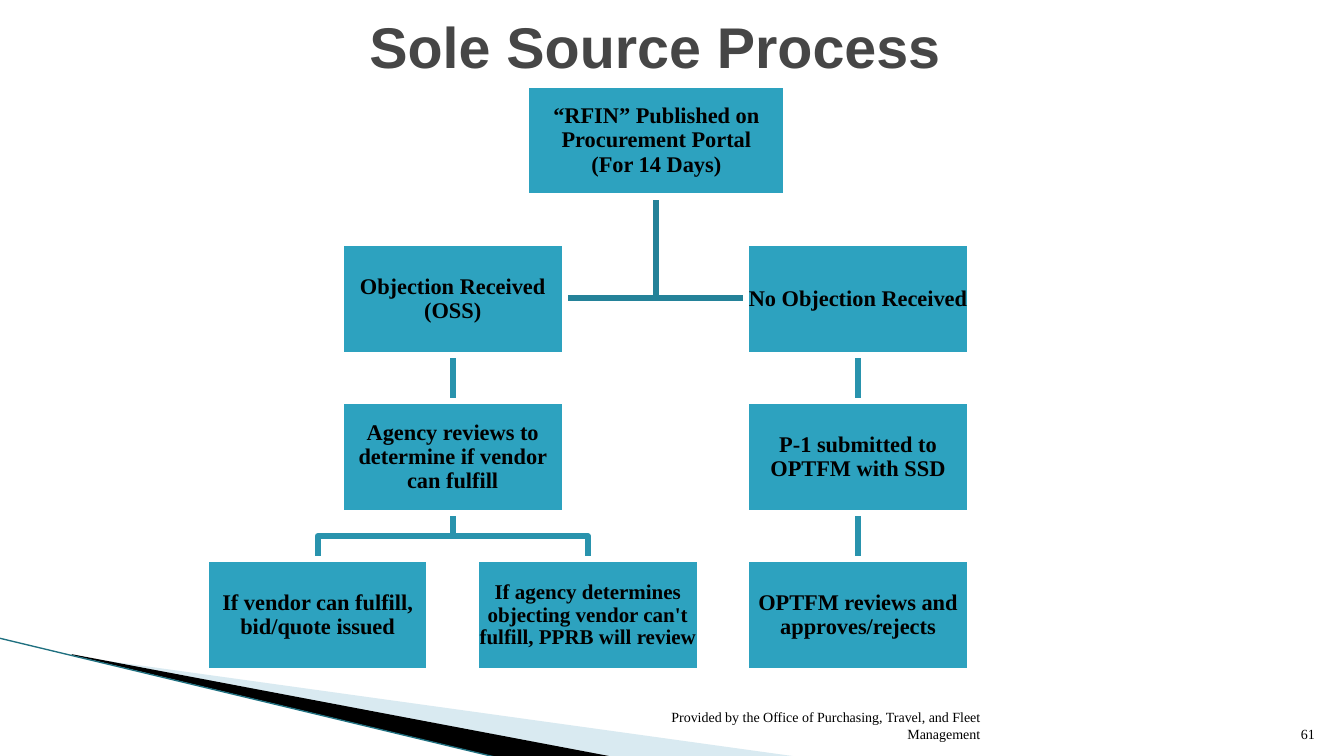
from dataclasses import dataclass

from lxml.etree import SubElement
from pptx import Presentation
from pptx.dml.color import RGBColor
from pptx.enum.shapes import MSO_CONNECTOR, MSO_SHAPE
from pptx.enum.text import MSO_ANCHOR, PP_ALIGN
from pptx.oxml.ns import qn
from pptx.util import Emu, Pt

EMU_PER_PX = 9144


@dataclass(frozen=True)
class Theme:
    """Colours, fonts and sizes of the slide."""
    heading_font: str = "Arial"
    body_font: str = "Times New Roman"
    title_color: str = "464646"
    black: str = "000000"
    white: str = "FFFFFF"
    box: str = "2DA2BF"
    root_link: str = "248299"
    link: str = "2993AD"
    pale_wedge: str = "A0CBDC"
    wedge_edge: str = "1F7080"
    title_size: int = 41
    box_size: int = 16
    tight_size: int = 15
    footer_size: int = 10
    link_width: float = 4.33
    edge_width: float = 0.95


class FlowSlide:
    """Draws the elements of a flow chart slide."""

    def __init__(self, slide, theme):
        self.slide = slide
        self.theme = theme

    def fill_text(self, text_frame, text, size, font=None, color=None, bold=False,
                  align=PP_ALIGN.CENTER, anchor=MSO_ANCHOR.MIDDLE):
        """Fill a text frame with one styled paragraph."""
        text_frame.word_wrap = True
        text_frame.vertical_anchor = anchor
        paragraph = text_frame.paragraphs[0]
        paragraph.text = text
        paragraph.alignment = align
        for run in paragraph.runs:
            run.font.name = font or self.theme.body_font
            run.font.size = Pt(size)
            run.font.bold = bold
            run.font.color.rgb = RGBColor.from_string(color or self.theme.black)

    def text(self, left, top, width, height, text, size, **style):
        """Add a text box."""
        box = self.slide.shapes.add_textbox(*(Emu(px * EMU_PER_PX) for px in (left, top, width, height)))
        self.fill_text(box.text_frame, text, size, **style)

    def outline(self, shape, color, width):
        """Give a shape or connector a solid line."""
        shape.line.color.rgb = RGBColor.from_string(color)
        shape.line.width = Pt(width)

    def freeform(self, points, close):
        """Add a freeform through the given points."""
        builder = self.slide.shapes.build_freeform(*points[0], scale=EMU_PER_PX)
        builder.add_line_segments(points[1:], close=close)
        shape = builder.convert_to_shape()
        shape.shadow.inherit = False
        return shape

    def wedge(self, points, color, opacity=100):
        """Add a filled decorative wedge."""
        shape = self.freeform(points, True)
        shape.fill.solid()
        shape.fill.fore_color.rgb = RGBColor.from_string(color)
        shape.line.fill.background()
        if opacity < 100:
            color_element = shape.element.find(".//" + qn("a:srgbClr"))
            SubElement(color_element, qn("a:alpha"), val=str(opacity * 1000))

    def elbow(self, points, color):
        """Add an open bent line."""
        shape = self.freeform(points, False)
        shape.fill.background()
        self.outline(shape, color, self.theme.link_width)

    def line(self, start, end, color, width):
        """Add a straight line."""
        ends = (Emu(px * EMU_PER_PX) for px in (*start, *end))
        connector = self.slide.shapes.add_connector(MSO_CONNECTOR.STRAIGHT, *ends)
        self.outline(connector, color, width)
        SubElement(connector.element.spPr, qn("a:effectLst"))
        return connector

    def link(self, upper, lower):
        """Join two boxes with a vertical line that lies behind them."""
        connector = self.line((0, 0), (0, 0), self.theme.link, self.theme.link_width)
        connector.begin_connect(upper, 2)
        connector.end_connect(lower, 0)
        upper.element.addprevious(connector.element)

    def box(self, center, top, width, height, text, size):
        """Add a flow chart box centred on a column."""
        bounds = (Emu(px * EMU_PER_PX) for px in (center - width // 2, top, width, height))
        shape = self.slide.shapes.add_shape(MSO_SHAPE.RECTANGLE, *bounds)
        shape.shadow.inherit = False
        shape.fill.solid()
        shape.fill.fore_color.rgb = RGBColor.from_string(self.theme.box)
        self.outline(shape, self.theme.white, self.theme.link_width)
        frame = shape.text_frame
        frame.margin_left = frame.margin_right = frame.margin_top = frame.margin_bottom = Emu(EMU_PER_PX)
        self.fill_text(frame, text, size, bold=True)
        frame.paragraphs[0].line_spacing = 0.9
        return shape


def main():
    """Build and save the slide."""
    theme = Theme()
    presentation = Presentation()
    presentation.slide_width = Emu(1333 * EMU_PER_PX)
    presentation.slide_height = Emu(750 * EMU_PER_PX)
    flow = FlowSlide(presentation.slides.add_slide(presentation.slide_layouts[6]), theme)

    flow.wedge([(73, 651), (793, 751), (608, 751), (73, 650)], theme.pale_wedge, 40)
    flow.wedge([(71, 649), (609, 751), (496, 752), (72, 650)], theme.black)
    flow.line((-1, 633), (495, 752), theme.wedge_edge, theme.edge_width)

    flow.text(200, -17, 900, 125, "Sole Source Process", theme.title_size,
              font=theme.heading_font, color=theme.title_color, bold=True)
    footer = {"align": PP_ALIGN.RIGHT, "anchor": MSO_ANCHOR.BOTTOM}
    flow.text(639, 701, 343, 40, "Provided by the Office of Purchasing, Travel, and Fleet Management",
              theme.footer_size, **footer)
    flow.text(1261, 701, 53, 40, "61", theme.footer_size, **footer)

    box_width, root_width, box_height = 222, 258, 111
    root_center = 651
    issued, objection, review, no_objection = (315 + 134 * step for step in (0, 1, 2, 4))
    rows = [84 + 157 * row for row in range(4)]
    root_bottom = rows[0] + box_height
    answer_middle = rows[1] + box_height // 2
    fork_top = rows[2] + box_height
    fork_middle = (fork_top + rows[3]) // 2

    for side in (objection + box_width // 2, no_objection - box_width // 2):
        flow.elbow([(root_center, root_bottom), (root_center, answer_middle), (side, answer_middle)],
                   theme.root_link)
    for center in (issued, review):
        flow.elbow([(objection, fork_top), (objection, fork_middle), (center, fork_middle),
                    (center, rows[3])], theme.link)

    steps = [
        (root_center, 0, root_width, "“RFIN” Published on Procurement Portal\v(For 14 Days)", theme.box_size),
        (objection, 1, box_width, "Objection Received (OSS)", theme.box_size),
        (objection, 2, box_width, "Agency reviews to determine if vendor can fulfill", theme.box_size),
        (issued, 3, box_width, "If vendor can fulfill, bid/quote issued", theme.box_size),
        (review, 3, box_width, "If agency determines objecting vendor can't fulfill, PPRB will review",
         theme.tight_size),
        (no_objection, 1, box_width, "No Objection Received", theme.box_size),
        (no_objection, 2, box_width, "P-1 submitted to OPTFM with SSD", theme.box_size),
        (no_objection, 3, box_width, "OPTFM reviews and approves/rejects", theme.box_size),
    ]
    boxes = {(center, row): flow.box(center, rows[row], width, box_height, text, size)
             for center, row, width, text, size in steps}
    for center, row in ((objection, 1), (no_objection, 1), (no_objection, 2)):
        flow.link(boxes[center, row], boxes[center, row + 1])

    presentation.save("out.pptx")


if __name__ == "__main__":
    main()
